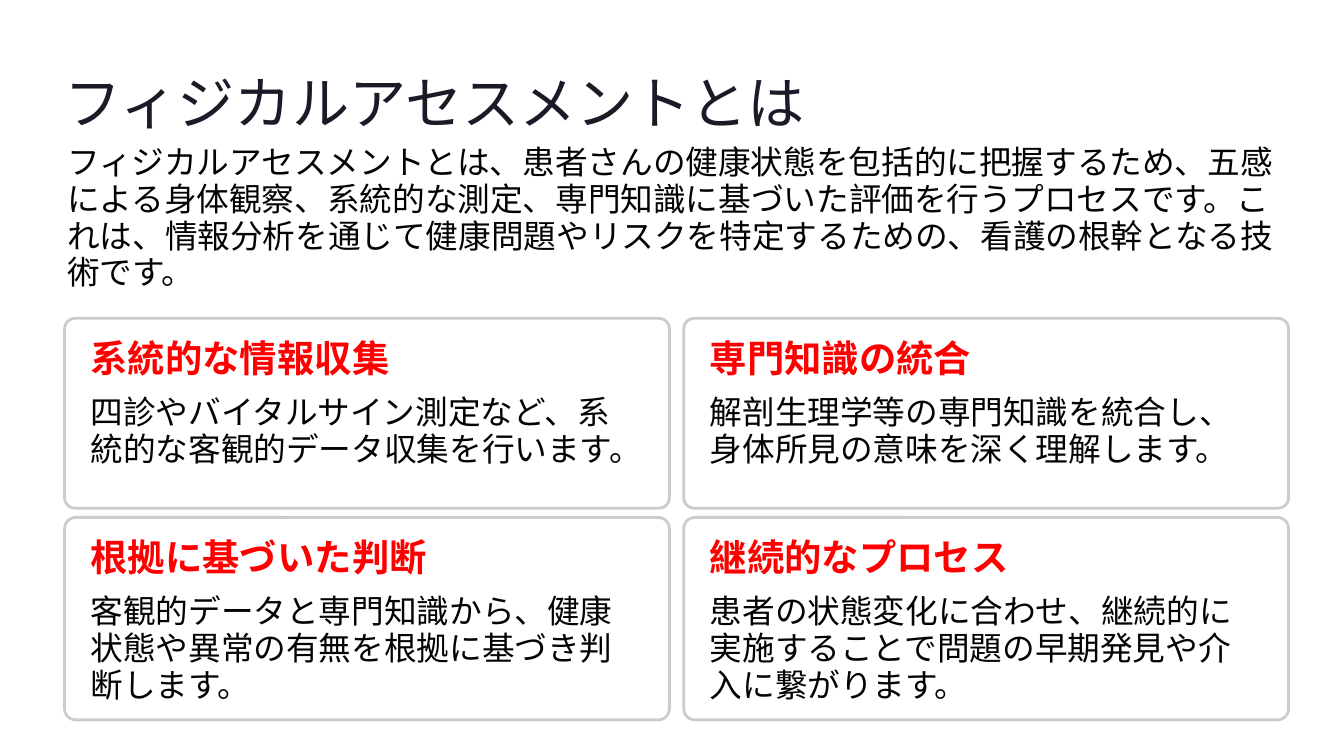
from lxml import etree
from pptx import Presentation
from pptx import util as u
from pptx.dml.color import RGBColor
from pptx.enum import shapes, text
from pptx.oxml.ns import qn

COLORS = {"title": "1B1B27", "body": "030303", "heading": "FF0000",
          "card": "FFFFFF", "border": "CCCCCC"}
TITLE = {"name": "Inter", "size": u.Pt(49), "bold": False}
HEADING = {"name": "Inter", "size": u.Pt(32), "bold": True}
BODY = {"name": "Cabin", "size": u.Pt(28), "bold": False}

prs = Presentation()
prs.slide_width, prs.slide_height = u.Pt(1152), u.Pt(648)
slide = prs.slides.add_slide(prs.slide_layouts[5])


def write(sp, box, words, font, color, spacing, wrap=True):
    """Place a text shape and fill it with one formatted paragraph."""
    sp.left, sp.top, sp.width, sp.height = [u.Pt(v) for v in box]
    tf = sp.text_frame
    frame = {"margin_left": 0, "margin_top": 0, "margin_right": 0,
             "margin_bottom": 0, "word_wrap": wrap,
             "auto_size": text.MSO_AUTO_SIZE.NONE,
             "vertical_anchor": text.MSO_ANCHOR.TOP}
    for key, value in frame.items():
        setattr(tf, key, value)
    p = tf.paragraphs[0]
    p.alignment = text.PP_ALIGN.LEFT
    p.line_spacing = u.Pt(spacing)
    r = p.add_run()
    r.text = words
    for key, value in font.items():
        setattr(r.font, key, value)
    r.font.color.rgb = RGBColor.from_string(COLORS[color])


def add_text(*args, **kwargs):
    write(slide.shapes.add_textbox(0, 0, 0, 0), *args, **kwargs)


# Title and introduction
write(slide.shapes.title, (55.4, 54.7, 640.8, 61.9),
      "フィジカルアセスメントとは", TITLE, "title", 61.5, wrap=False)
add_text((57.6, 123.8, 1041.1, 95),
         "フィジカルアセスメントとは、患者さんの健康状態を包括的に把握するため、"
         "五感による身体観察、系統的な測定、専門知識に基づいた評価を行うプロセスです。"
         "これは、情報分析を通じて健康問題やリスクを特定するための、"
         "看護の根幹となる技術です。", BODY, "body", 31.5)

# Two by two grid of cards
CARDS = [
    ("系統的な情報収集", "四診やバイタルサイン測定など、系統的な客観的データ収集を行います。"),
    ("専門知識の統合", "解剖生理学等の専門知識を統合し、身体所見の意味を深く理解します。"),
    ("根拠に基づいた判断", "客観的データと専門知識から、健康状態や異常の有無を根拠に基づき判断します。"),
    ("継続的なプロセス", "患者の状態変化に合わせ、継続的に実施することで問題の早期発見や介入に繋がります。"),
]
COLUMNS = [55.4, 586.1]
ROWS = [(272.9, 162.7), (443.5, 173.5)]
CARD_W, PAD = 518.4, 22.3

for i, (heading, body) in enumerate(CARDS):
    x = COLUMNS[i % 2]
    y, h = ROWS[i // 2]
    card = slide.shapes.add_shape(shapes.MSO_SHAPE.ROUNDED_RECTANGLE,
                                  u.Pt(x), u.Pt(y), u.Pt(CARD_W), u.Pt(h))
    card.adjustments[0] = 0.055
    card.shadow.inherit = False
    card.fill.solid()
    card.fill.fore_color.rgb = RGBColor.from_string(COLORS["card"])
    fill = card.fill._xPr.find(qn("a:solidFill"))
    etree.SubElement(fill[0], qn("a:alpha"), val="95000")
    card.line.color.rgb = RGBColor.from_string(COLORS["border"])
    card.line.width = u.Pt(2.4)

    add_text((x + PAD, y + PAD, 247.7, 31), heading, HEADING, "heading", 30.5,
             wrap=False)
    add_text((x + PAD, y + 65.2, 466.6, 63.4), body, BODY, "body", 31.5)

prs.save("out.pptx")
